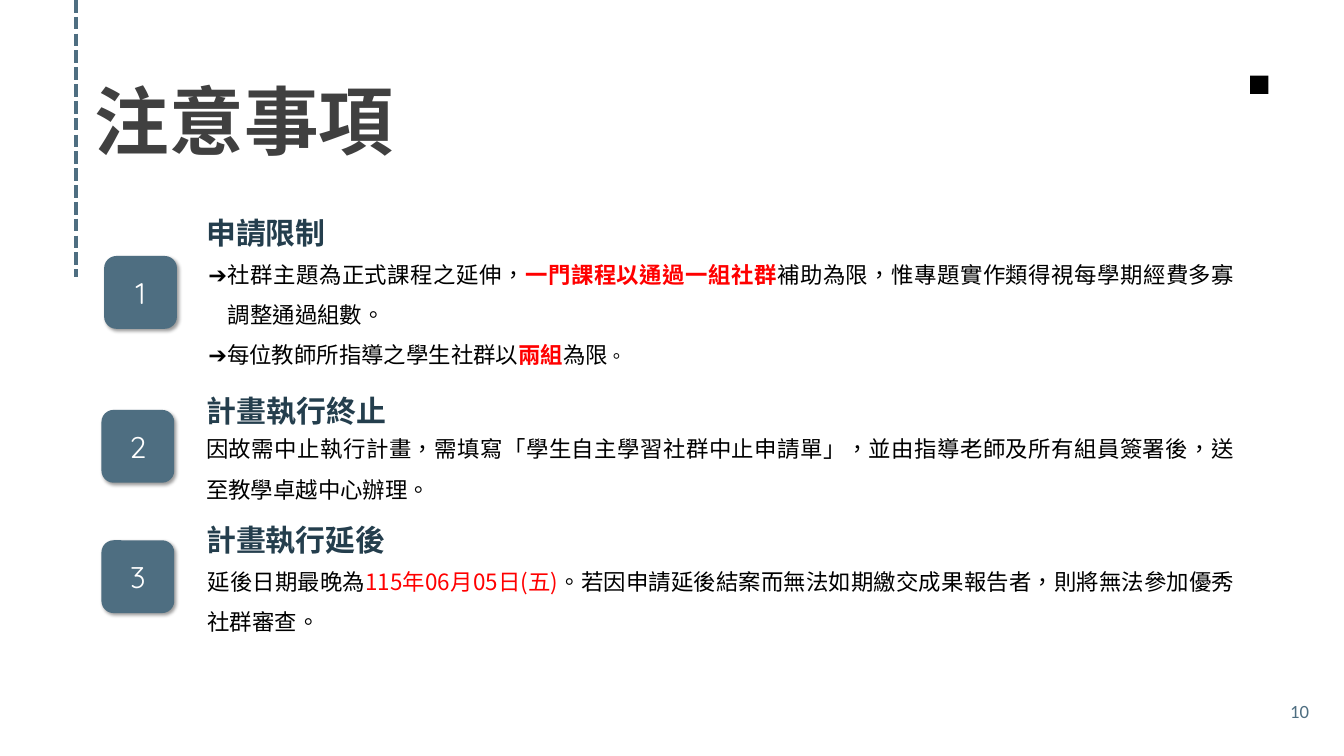
import pptx
import pptx.dml.color
import pptx.enum.dml
import pptx.enum.lang
import pptx.enum.shapes
import pptx.enum.text
import pptx.oxml
import pptx.oxml.ns
import pptx.util

Pt = pptx.util.Pt
ALIGN = pptx.enum.text.PP_ALIGN
ANCHOR = pptx.enum.text.MSO_ANCHOR
FIT = pptx.enum.text.MSO_AUTO_SIZE
SHAPE = pptx.enum.shapes.MSO_SHAPE
CHINESE = pptx.enum.lang.MSO_LANGUAGE_ID.TRADITIONAL_CHINESE

COLORS = {
    "steel": "4E6E81",
    "heading": "243E4D",
    "title": "404040",
    "body": "000000",
    "alert": "FF0000",
    "white": "FFFFFF",
}
CJK = "Noto Sans CJK SC"

TITLE = {"size": Pt(80), "name": CJK, "bold": True, "language_id": CHINESE}
HEADING = {"size": Pt(32), "name": CJK, "bold": True, "language_id": CHINESE}
BODY = {"size": Pt(24), "name": CJK, "bold": False, "language_id": CHINESE}
STRONG = {**BODY, "bold": True}
SMALL = {**BODY, "size": Pt(20)}
BADGE = {"size": Pt(32), "name": "Quicksand"}
PAGE = {"size": Pt(20), "name": "Calibri"}

JUSTIFIED = {"alignment": ALIGN.JUSTIFY, "line_spacing": 1.5, "space_before": Pt(0)}

LIMITS = [
    [("➔社群主題為正式課程之延伸，", BODY, "body"),
     ("一門課程以通過一組社群", STRONG, "alert"),
     ("補助為限，惟專題實作類得視每學期經費多寡調整通過組數。", BODY, "body")],
    [("➔每位教師所指導之學生社群以", BODY, "body"),
     ("兩組", STRONG, "alert"),
     ("為限", BODY, "body"),
     ("。", SMALL, "body")],
]
TERMINATION = [
    [("因故需中止執行計畫，需填寫「學生自主學習社群中止申請單」，"
      "並由指導老師及所有組員簽署後，送至教學卓越中心辦理。", BODY, "body")],
]
DELAY = [
    [("延後日期最晚為", BODY, "body"),
     ("115年06月05日(五)", BODY, "alert"),
     ("。若因申請延後結案而無法如期繳交成果報告者，則將無法參加優秀社群審查。", BODY, "body")],
]

# Heading, heading box, text, text box, badge position
SECTIONS = [
    ("申請限制", (213.8, 226, 212, 46), LIMITS, (216, 261.4, 1113.8, 132.5), (111.6, 274.3)),
    ("計畫執行終止", (214.6, 417.6, 251, 46), TERMINATION, (213.8, 448.6, 1116, 89.3), (108.7, 439.2)),
    ("計畫執行延後", (213.8, 555.1, 228, 46), DELAY, (215.3, 590.4, 1114.6, 89.3), (108.7, 578.9)),
]


def rgb(color):
    return pptx.dml.color.RGBColor.from_string(COLORS[color])


def apply(target, values):
    for name, value in values.items():
        setattr(target, name, value)


def place(shape, box):
    apply(shape, dict(zip(("left", "top", "width", "height"), map(Pt, box))))


def write(shape, paragraphs, paragraph_format, **frame_format):
    frame = shape.text_frame
    apply(frame, {"word_wrap": True, "auto_size": FIT.NONE, **frame_format})
    for index, runs in enumerate(paragraphs):
        paragraph = frame.add_paragraph() if index else frame.paragraphs[0]
        apply(paragraph, paragraph_format)
        for text, font_format, color in runs:
            run = paragraph.add_run()
            run.text = text
            apply(run.font, font_format)
            run.font.color.rgb = rgb(color)
            east_asian = pptx.oxml.parse_xml(
                f'<a:ea {pptx.oxml.ns.nsdecls("a")} typeface="{font_format["name"]}"/>')
            run.font._element.find(pptx.oxml.ns.qn("a:latin")).addnext(east_asian)


def add_text(slide, box, paragraphs, paragraph_format, **frame_format):
    write(slide.shapes.add_textbox(*map(Pt, box)), paragraphs, paragraph_format, **frame_format)


def add_filled(slide, preset, box, color):
    shape = slide.shapes.add_shape(preset, *map(Pt, box))
    shape.fill.solid()
    shape.fill.fore_color.rgb = rgb(color)
    shape.line.fill.background()
    shape.shadow.inherit = False
    return shape


def add_badge(slide, number, left, top):
    badge = add_filled(slide, SHAPE.ROUNDED_RECTANGLE, (left, top, 78, 78), "steel")
    shadow = pptx.oxml.parse_xml(
        f'<a:outerShdw {pptx.oxml.ns.nsdecls("a")} blurRad="{Pt(4)}" dist="{Pt(3)}" '
        'dir="2700000" algn="tl" rotWithShape="0"><a:srgbClr val="000000">'
        '<a:alpha val="40000"/></a:srgbClr></a:outerShdw>')
    badge._element.spPr.find(pptx.oxml.ns.qn("a:effectLst")).append(shadow)
    write(badge, [[(str(number), BADGE, "white")]], {"alignment": ALIGN.CENTER},
          vertical_anchor=ANCHOR.MIDDLE)


def add_dashed_line(slide, x, bottom):
    connector = slide.shapes.add_connector(
        pptx.enum.shapes.MSO_CONNECTOR.STRAIGHT, Pt(x), Pt(0), Pt(x), Pt(bottom))
    connector.line.color.rgb = rgb("steel")
    connector.line.width = Pt(4.5)
    connector.line.dash_style = pptx.enum.dml.MSO_LINE.SQUARE_DOT
    connector._element.spPr.append(
        pptx.oxml.parse_xml(f'<a:effectLst {pptx.oxml.ns.nsdecls("a")}/>'))


def fill_title(slide, text):
    title = slide.shapes.title
    place(title, (101.5, 72, 574, 97.2))
    write(title, [[(text, TITLE, "title")]],
          {"alignment": ALIGN.LEFT, "line_spacing": Pt(104.4)},
          vertical_anchor=ANCHOR.TOP, auto_size=FIT.SHAPE_TO_FIT_TEXT,
          margin_left=0, margin_top=0, margin_right=0, margin_bottom=0)


def fill_list(slide, box, paragraphs):
    """Put the list in the body placeholder; only its first item hangs."""
    body = slide.placeholders[1]
    place(body, box)
    write(body, paragraphs, JUSTIFIED, auto_size=FIT.SHAPE_TO_FIT_TEXT)
    for index, paragraph in enumerate(body.text_frame.paragraphs):
        hang = 0 if index else Pt(21)
        properties = paragraph._p.get_or_add_pPr()
        properties.set("marL", str(hang))
        properties.set("indent", str(-hang))
        properties.append(pptx.oxml.parse_xml(f'<a:buNone {pptx.oxml.ns.nsdecls("a")}/>'))


def main():
    deck = pptx.Presentation()
    deck.slide_width, deck.slide_height = Pt(1440), Pt(810)
    slide = deck.slides.add_slide(deck.slide_layouts[1])

    add_dashed_line(slide, 81.4, 296.6)
    add_filled(slide, SHAPE.RECTANGLE, (1339.5, 81, 19.5, 19.5), "body")
    fill_title(slide, "注意事項")
    for number, (heading, heading_box, text, text_box, badge) in enumerate(SECTIONS, 1):
        add_text(slide, heading_box, [[(heading, HEADING, "heading")]], {},
                 auto_size=FIT.SHAPE_TO_FIT_TEXT)
        if text is LIMITS:
            fill_list(slide, text_box, text)
        else:
            add_text(slide, text_box, text, JUSTIFIED, auto_size=FIT.SHAPE_TO_FIT_TEXT)
        add_badge(slide, number, *badge)
    add_text(slide, (1242, 747.4, 167.8, 28.8), [[("10", PAGE, "steel")]],
             {"alignment": ALIGN.RIGHT}, vertical_anchor=ANCHOR.MIDDLE)

    deck.save("out.pptx")


if __name__ == "__main__":
    main()
